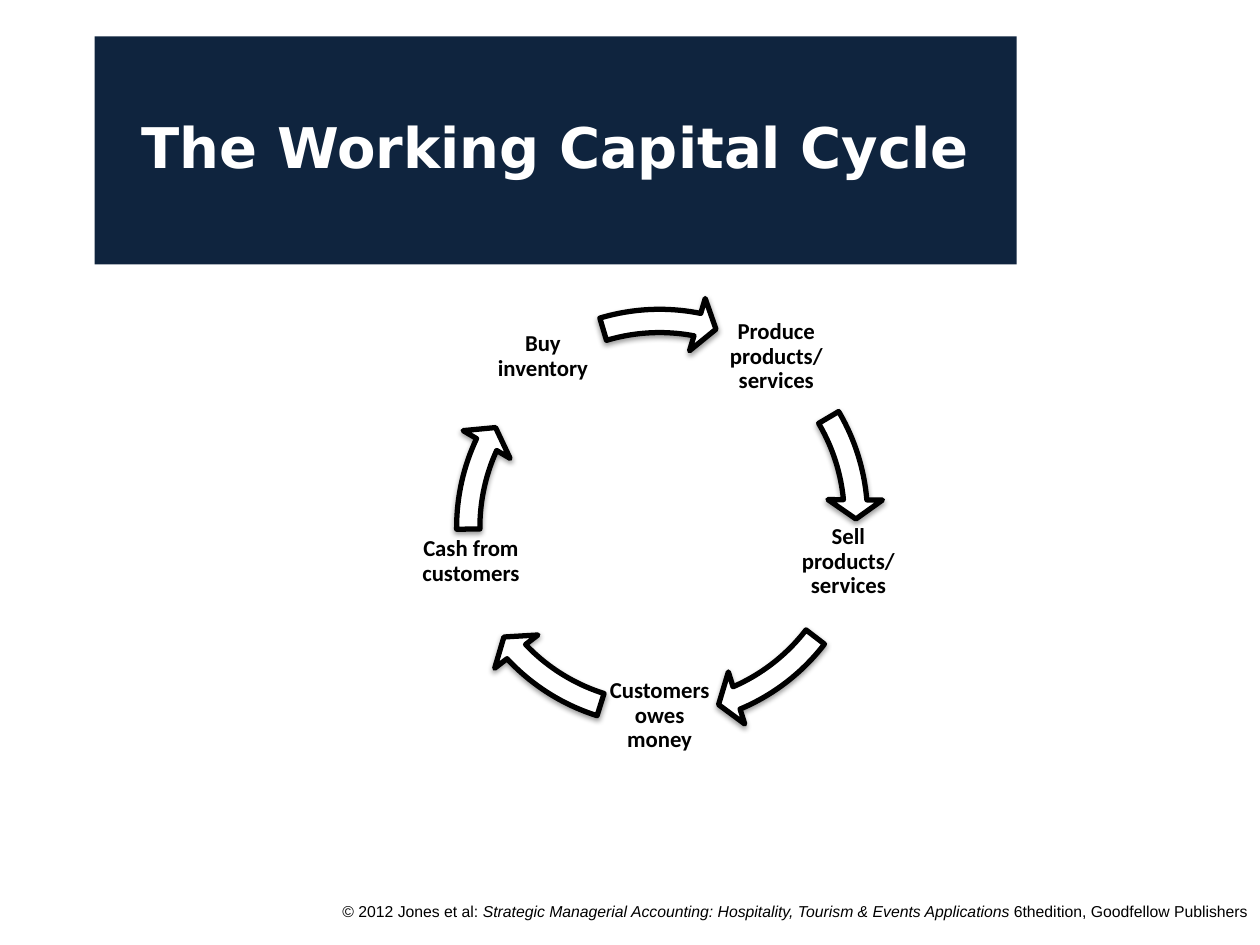
import math
from lxml import etree
from pptx import Presentation
from pptx.dml.color import RGBColor
from pptx.enum import shapes, text
from pptx.oxml import ns
from pptx.util import Pt

COLORS = {"navy": "0F243E", "white": "FFFFFF", "black": "000000"}
STAGES = [
    ("Produce products/ services", 0),
    ("Sell products/ services", 19.4),
    ("Customers owes money", 0),
    ("Cash from customers", 19.4),
    ("Buy inventory", 0),
]
ARROWS = [
    (329.44, 354.89, 0, 0),
    (37.56, 66.92, 0, 0),
    (107.49, 136.85, 0, 0),
    (179.51, 204.97, 2.9, 5.8),
    (253.31, 281.1, 0, 0),
]


def color(name):
    return RGBColor.from_string(COLORS[name])


def set_font(font, name, size, color_name, bold=False):
    font.name, font.size, font.bold = name, Pt(size), bold
    font.color.rgb = color(color_name)


def set_margins(frame, left, top, right, bottom):
    frame.margin_left, frame.margin_top = Pt(left), Pt(top)
    frame.margin_right, frame.margin_bottom = Pt(right), Pt(bottom)


def add_shadow(shape):
    shape.shadow.inherit = False
    effects = shape._element.spPr.find(ns.qn("a:effectLst"))
    shadow = etree.SubElement(
        effects, ns.qn("a:outerShdw"), blurRad=str(Pt(3.1)), dist=str(Pt(1.6)),
        dir="5400000", rotWithShape="0")
    tint = etree.SubElement(shadow, ns.qn("a:srgbClr"), val=COLORS["black"])
    etree.SubElement(tint, ns.qn("a:alpha"), val="38000")


def fill_title(slide, left, top, width, height):
    title = slide.shapes.title
    title.left, title.top = Pt(left), Pt(top)
    title.width, title.height = Pt(width), Pt(height)
    title.fill.solid()
    title.fill.fore_color.rgb = color("navy")
    frame = title.text_frame
    frame.text = "The Working Capital Cycle"
    frame.vertical_anchor = text.MSO_ANCHOR.MIDDLE
    set_margins(frame, 7.2, 3.6, 7.2, 8.2)
    paragraph = frame.paragraphs[0]
    paragraph.alignment = text.PP_ALIGN.CENTER
    set_font(paragraph.font, "DejaVu Sans", 32, "white", bold=True)


def add_label(slide, center_x, center_y, size, label, lift):
    box = slide.shapes.add_textbox(
        Pt(center_x - size / 2), Pt(center_y - size / 2), Pt(size), Pt(size))
    frame = box.text_frame
    frame.word_wrap = True
    frame.vertical_anchor = text.MSO_ANCHOR.MIDDLE
    set_margins(frame, 1.3, 1.3, 1.3, 1.3 + lift)
    paragraph = frame.paragraphs[0]
    paragraph.text = label
    paragraph.alignment = text.PP_ALIGN.CENTER
    paragraph.line_spacing = 0.9
    set_font(paragraph.font, "Calibri", 13, "black", bold=True)


def add_arrow(slide, left, top, size, start, end):
    arrow = slide.shapes.add_shape(
        shapes.MSO_SHAPE.CIRCULAR_ARROW, Pt(left), Pt(top), Pt(size), Pt(size))
    for index, value in enumerate((0.052, 3.359, end * 0.6, start * 0.6, 0.061)):
        arrow.adjustments[index] = value
    arrow.fill.solid()
    arrow.fill.fore_color.rgb = color("white")
    arrow.line.color.rgb = color("black")
    arrow.line.width = Pt(3)
    add_shadow(arrow)


def add_cycle(slide, left, top, size):
    center_x, center_y = left + size / 2, top + size / 2
    radius = 113.4
    step = 360 / len(STAGES)
    for index, ((label, lift), (start, end, dx, dy)) in enumerate(zip(STAGES, ARROWS)):
        angle = math.radians(index * step - 54)
        add_label(slide, center_x + radius * math.cos(angle),
                  center_y + radius * math.sin(angle), 68.4, label, lift)
        add_arrow(slide, left + dx, top + dy, size, start, end)


def add_footer(slide, left, top, width, height):
    box = slide.shapes.add_textbox(Pt(left), Pt(top), Pt(width), Pt(height))
    box.text_frame.word_wrap = True
    paragraph = box.text_frame.paragraphs[0]
    paragraph.alignment = text.PP_ALIGN.RIGHT
    set_font(paragraph.font, "Arial", 9, "black")
    for part, italic in (
        ("© 2012 Jones et al: ", False),
        ("Strategic Managerial Accounting: Hospitality, Tourism & Events Applications ", True),
        ("6thedition, Goodfellow Publishers", False),
    ):
        run = paragraph.add_run()
        run.text = part
        run.font.italic = italic


def main():
    presentation = Presentation()
    presentation.slide_width, presentation.slide_height = Pt(720), Pt(540)
    slide = presentation.slides.add_slide(presentation.slide_layouts[5])
    add_footer(slide, 160.5, 512, 559.5, 28)
    fill_title(slide, 54, 20.8, 527, 130.3)
    add_cycle(slide, 249.1, 167.8, 255.6)
    presentation.save("out.pptx")


if __name__ == "__main__":
    main()
